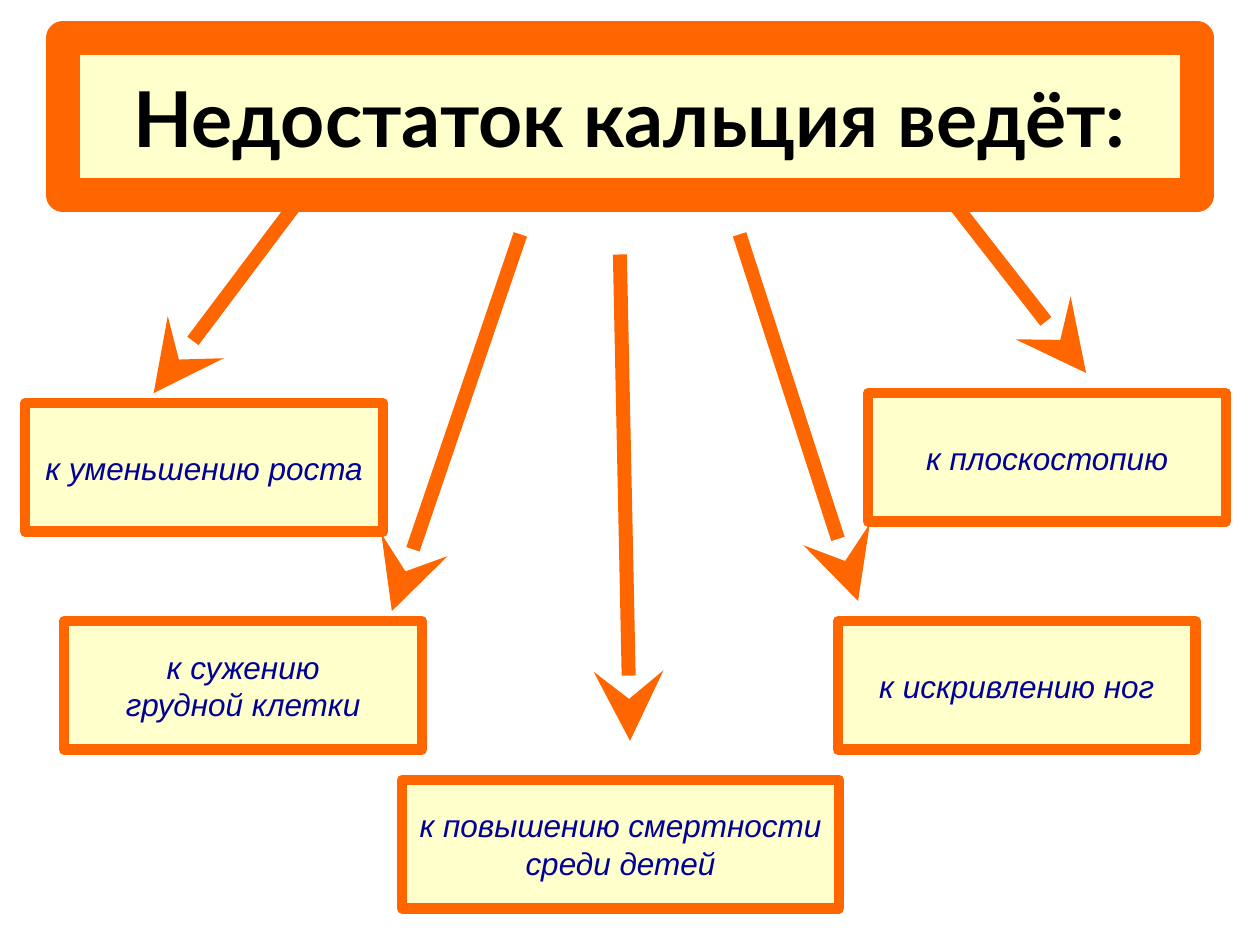
from pptx import Presentation
from pptx.dml.color import RGBColor
from pptx.enum.shapes import MSO_CONNECTOR, MSO_SHAPE
from pptx.enum.text import MSO_ANCHOR, MSO_AUTO_SIZE, PP_ALIGN
from pptx.oxml.ns import qn
from pptx.util import Inches, Pt
from lxml import etree

RECT = MSO_SHAPE.RECTANGLE
STRAIGHT = MSO_CONNECTOR.STRAIGHT
MIDDLE = MSO_ANCHOR.MIDDLE
CENTER = PP_ALIGN.CENTER
NO_FIT = MSO_AUTO_SIZE.NONE

THEME = {
    "cream": RGBColor(0xFF, 0xFF, 0xCC),
    "orange": RGBColor(0xFF, 0x66, 0x00),
    "black": RGBColor(0x00, 0x00, 0x00),
    "navy": RGBColor(0x00, 0x00, 0x99),
    "title font": "Lato",
    "body font": "Arial",
    "title size": Pt(44),
    "body size": Pt(18),
    "title edge": Pt(19.25),
    "box edge": Pt(6),
    "arrow": Pt(8),
}

deck = Presentation()
deck.slide_width, deck.slide_height = Inches(10), Inches(7.5)
slide = deck.slides.add_slide(deck.slide_layouts[5])

# The slide is a grid of 100 columns by 75 rows.
COL = deck.slide_width / 100
ROW = deck.slide_height / 75


def grid(*cells):
    """Turn alternating column and row counts into lengths."""
    return [int(n * unit) for n, unit in zip(cells, (COL, ROW) * 2)]


def dress(shape, edge, role, color):
    """Give a panel its fill, border and centred text style."""
    shape.fill.solid()
    shape.fill.fore_color.rgb = THEME["cream"]
    shape.line.color.rgb = THEME["orange"]
    shape.line.width = THEME[edge]
    frame = shape.text_frame
    frame.auto_size = NO_FIT
    frame.vertical_anchor = MIDDLE
    for para in frame.paragraphs:
        para.alignment = CENTER
        for run in para.runs:
            run.font.name = THEME[role + " font"]
            run.font.size = THEME[role + " size"]
            run.font.color.rgb = THEME[color]
            run.font.bold = role == "title"
            run.font.italic = role == "body"


# Title
title = slide.shapes.title
title.left, title.top, title.width, title.height = grid(5, 3, 90, 12.5)
title.text_frame.text = "Недостаток кальция ведёт:"
dress(title, "title edge", "title", "black")

# Arrows: start column and row, end column and row
ARROWS = [
    (24, 15.5, 12.2, 31.2),
    (41.3, 18.6, 31.1, 48.5),
    (49.2, 20.2, 50, 58.8),
    (58.7, 18.6, 68.1, 47.7),
    (75.2, 15.5, 86.2, 29.6),
]
for ends in ARROWS:
    arrow = slide.shapes.add_connector(STRAIGHT, *grid(*ends))
    arrow.line.color.rgb = THEME["orange"]
    arrow.line.width = THEME["arrow"]
    props = arrow.line._get_or_add_ln()
    etree.SubElement(props, qn("a:tailEnd"), type="stealth", w="lg", len="lg")
    etree.SubElement(arrow._element.spPr, qn("a:effectLst"))

# Effects: left column, top row, width, text
HIGH = 10.2
WIDE = 28.4
EFFECTS = [
    (2, 32, WIDE, "к уменьшению роста"),
    (5.1, 49.3, WIDE, "к сужению\nгрудной клетки"),
    (31.9, 61.9, 34.7, "к повышению смертности\nсреди детей"),
    (66.5, 49.3, WIDE, "к искривлению ног"),
    (68.9, 31.2, WIDE, "к плоскостопию"),
]
for left, top, width, text in EFFECTS:
    box = slide.shapes.add_shape(RECT, *grid(left, top, width, HIGH))
    box.shadow.inherit = False
    box.text_frame.text = text
    box.text_frame.word_wrap = False
    dress(box, "box edge", "body", "navy")

deck.save("out.pptx")
